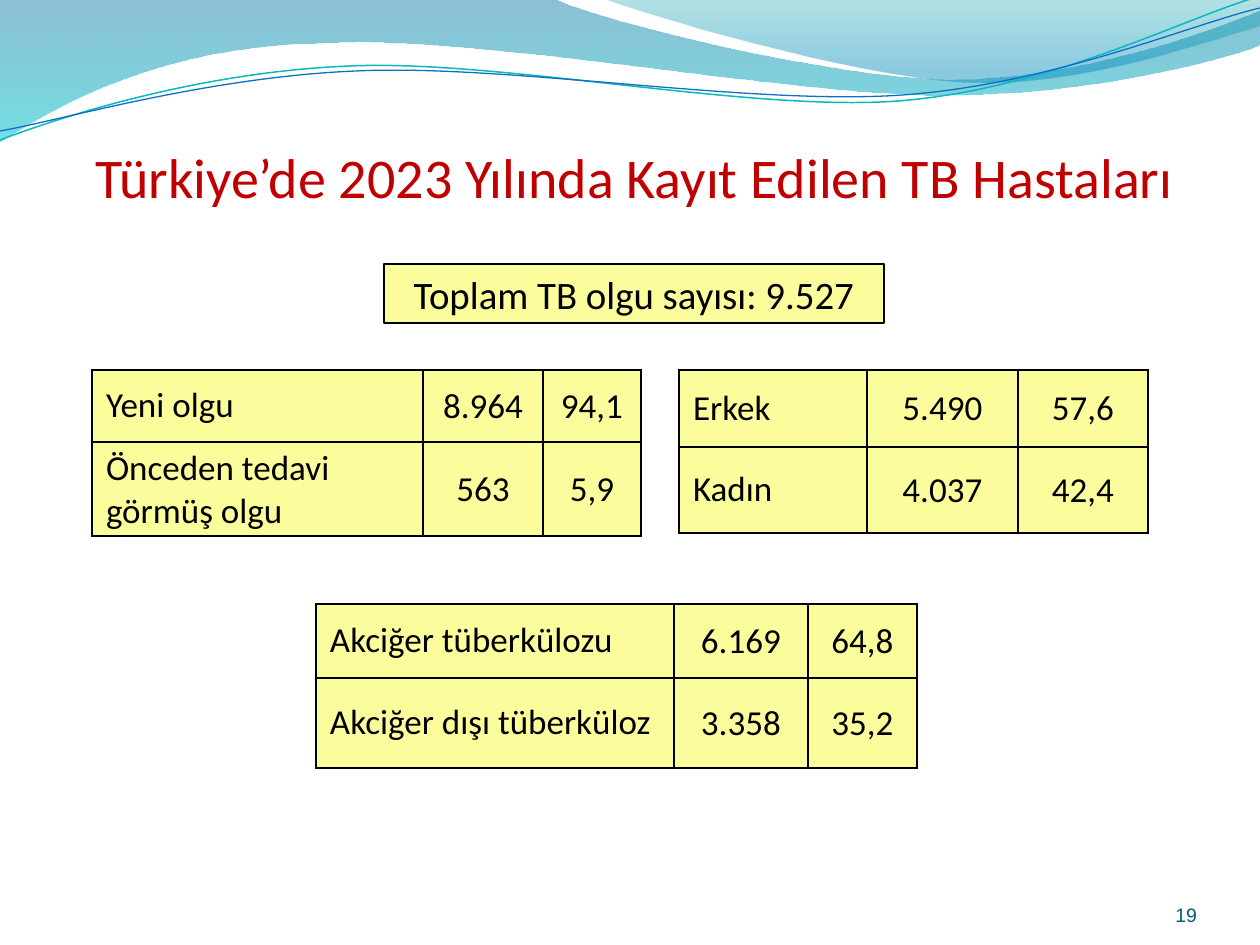
from lxml.etree import SubElement as Sub
from pptx import Presentation
from pptx.dml.color import RGBColor
from pptx.enum.shapes import MSO_SHAPE as Kind
from pptx.enum.text import MSO_ANCHOR as Anchor, PP_ALIGN as Align
from pptx.oxml.ns import qn
from pptx.util import Pt

PX = 914400 / 126
hue = RGBColor.from_string


def px(*nums):
    return [round(n * PX) for n in nums]


def write(frame, text, size, color, align, font="Calibri"):
    frame.text = text
    frame.word_wrap = True
    para = frame.paragraphs[0]
    para.alignment = align
    face = para.runs[0].font
    face.name, face.size, face.color.rgb = font, Pt(size), hue(color)


deck = Presentation()
deck.slide_width, deck.slide_height = px(1260, 945)
slide = deck.slides.add_slide(deck.slide_layouts[6])
shapes = slide.shapes

waves = [
    ([(0, 0), (554, -1), (600, 21, 837, 79, 955, 79), (1074, 79, 1207, 33, 1260, 11),
      (1261, 45), (1239, 55, 1096, 96, 940, 95), (784, 95, 481, 35, 324, 43),
      (163, 45, 58, 105, -1, 142)],
     [(0, "0074A1", 45), (1, "00C6CF", 55)], None),
    ([(604, -1), (641, 14, 859, 78, 969, 82), (1079, 87, 1211, 40, 1260, 26), (1260, 0)],
     [(0, "00A1A9", 30), (0.8, "008BBF", 45)], None),
    ([(0, 140), (60, 117, 199, 72, 349, 66), (498, 59, 747, 112, 898, 101),
      (1050, 89, 1182, 19, 1257, -3)], None, ("0AB8BF", 0.85)),
    ([(0, 131), (59, 121, 207, 77, 357, 71), (508, 64, 752, 106, 903, 95),
      (1053, 84, 1186, 26, 1260, 8)], None, ("0F6FC6", 0.75)),
]
for route, stops, pen in waves:
    dots = [px(*leg[i:i + 2]) for leg in route for i in range(0, len(leg), 2)]
    trace = shapes.build_freeform(*dots[0])
    trace.add_line_segments(dots[1:], close=bool(stops))
    wave = trace.convert_to_shape()
    wave.shadow.inherit = False
    lines = iter(wave.element.findall(".//" + qn("a:lnTo")))
    for leg in route[1:]:
        line = next(lines)
        if len(leg) == 6:
            line.tag = qn("a:cubicBezTo")
            for extra in (next(lines), next(lines)):
                line.append(extra[0])
                extra.getparent().remove(extra)
    if stops:
        wave.line.fill.background()
        wave.fill.gradient()
        wave.fill.gradient_angle = 270
        for stop, (place, color, solid) in zip(wave.fill.gradient_stops, stops):
            stop.position, stop.color.rgb = place, hue(color)
        tints = wave.element.spPr.findall(".//" + qn("a:srgbClr"))
        for tint, (place, color, solid) in zip(tints, stops):
            Sub(tint, qn("a:alpha"), val=str(solid * 1000))
    else:
        wave.fill.background()
        wave.line.color.rgb, wave.line.width = hue(pen[0]), Pt(pen[1])

title = shapes.add_textbox(*px(39, 136, 1191, 81)).text_frame
write(title, "Türkiye’de 2023 Yılında Kayıt Edilen TB Hastaları", 32, "C00000", Align.CENTER)

number = shapes.add_textbox(*px(1092, 876, 105, 50)).text_frame
number.margin_left = number.margin_right = number.margin_top = number.margin_bottom = 0
number.vertical_anchor = Anchor.BOTTOM
write(number, "19", 11.1, "045D75", Align.RIGHT, "Arial")

total = shapes.add_shape(Kind.RECTANGLE, *px(384, 264, 500, 59))
total.shadow.inherit = False
total.fill.solid()
total.fill.fore_color.rgb = hue("FBFD9D")
total.line.color.rgb, total.line.width = hue("000000"), Pt(0.75)
total.text_frame.vertical_anchor = Anchor.MIDDLE
write(total.text_frame, "Toplam TB olgu sayısı: 9.527", 22.2, "000000", Align.CENTER)
total.text_frame.paragraphs[0].space_before = Pt(4.4)

tables = [
    (92, 370, (331, 120, 98), (72, 77),
     [("Yeni olgu", "8.964", "94,1"), ("Önceden tedavi görmüş olgu", "563", "5,9")]),
    (679, 370, (188, 151, 130), (77, 86),
     [("Erkek", "5.490", "57,6"), ("Kadın", "4.037", "42,4")]),
    (316, 604, (358, 134, 109), (74, 90),
     [("Akciğer tüberkülozu", "6.169", "64,8"),
      ("Akciğer dışı tüberküloz", "3.358", "35,2")]),
]
for left, top, wide, high, rows in tables:
    box = px(left, top, sum(wide), sum(high))
    table = shapes.add_table(len(rows), len(wide), *box).table
    for col, width in zip(table.columns, px(*wide)):
        col.width = width
    for r, row in enumerate(rows):
        table.rows[r].height = px(high[r])[0]
        for c, text in enumerate(row):
            cell = table.cell(r, c)
            write(cell.text_frame, text, 20, "000000", Align.CENTER if c else Align.LEFT)
            cell.vertical_anchor = Anchor.MIDDLE
            side, over, under = px(1, 1, 0) if c else px(14, 5, 5)
            cell.margin_left = cell.margin_right = side
            cell.margin_top, cell.margin_bottom = over, under
            props = cell._tc.get_or_add_tcPr()
            for name in ("a:lnL", "a:lnR", "a:lnT", "a:lnB"):
                rule = Sub(props, qn(name), w=str(Pt(1)))
                Sub(Sub(rule, qn("a:solidFill")), qn("a:srgbClr"), val="000000")
            cell.fill.solid()
            cell.fill.fore_color.rgb = hue("FBFD9D")

deck.save("out.pptx")
